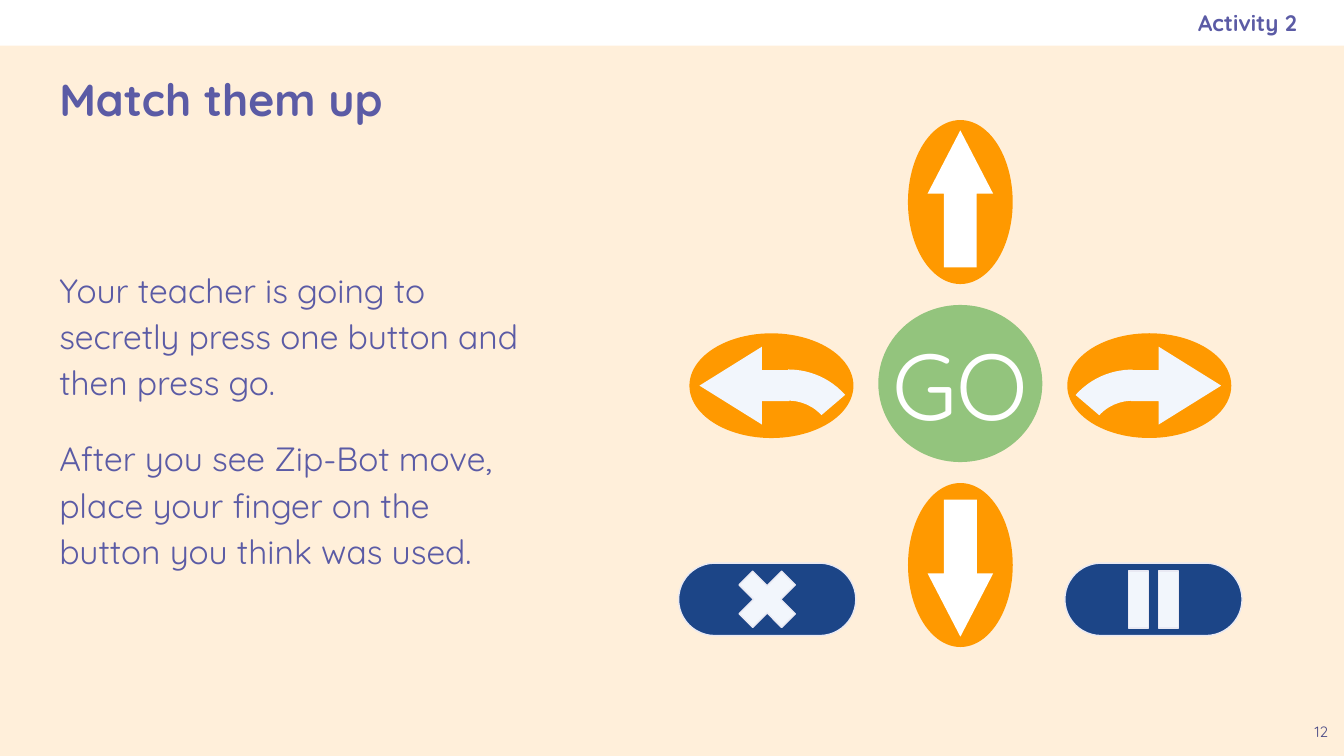
from dataclasses import dataclass

from lxml.etree import SubElement
from pptx import Presentation
from pptx.dml.color import RGBColor
from pptx.enum.shapes import MSO_SHAPE
from pptx.enum.text import MSO_ANCHOR, MSO_AUTO_SIZE, PP_ALIGN
from pptx.oxml.ns import qn
from pptx.util import Cm, Pt

CREAM = RGBColor(0xFF, 0xEF, 0xDA)
WHITE = RGBColor(0xFF, 0xFF, 0xFF)
PURPLE = RGBColor(0x5B, 0x5B, 0xA5)
DUSK = RGBColor(0x49, 0x49, 0x85)
ORANGE = RGBColor(0xFF, 0x99, 0x00)
PALE = RGBColor(0xF2, 0xF6, 0xFC)
NAVY = RGBColor(0x1C, 0x45, 0x87)
EDGE = RGBColor(0xE9, 0xE9, 0xF3)
GREEN = RGBColor(0x93, 0xC4, 0x7D)

FONT = "Quicksand"
MID_X, MID_Y = 18.15, 7.25  # centre of the GO button, in cm


@dataclass
class Part:
    """A shape whose centre lies dx, dy (cm) from the GO button."""
    kind: MSO_SHAPE
    dx: float
    dy: float
    wide: float
    high: float
    fill: RGBColor
    turn: float = 0
    adj: tuple = ()
    edge: bool = False


def place(shape, left: float, top: float, wide: float, high: float) -> None:
    shape.left, shape.top = Cm(left), Cm(top)
    shape.width, shape.height = Cm(wide), Cm(high)


def write(shape, *lines: str, size: float, color: RGBColor = PURPLE,
          bold: bool = False, align=PP_ALIGN.LEFT, anchor=MSO_ANCHOR.TOP,
          gap: float = 0, pitch: float = 1, pad=(0.25, 0.25, 0.25, 0.25)) -> None:
    """Fill a text frame; pad is left, top, right, bottom in cm."""
    frame = shape.text_frame
    frame.word_wrap = True
    frame.auto_size = MSO_AUTO_SIZE.NONE
    frame.vertical_anchor = anchor
    (frame.margin_left, frame.margin_top,
     frame.margin_right, frame.margin_bottom) = map(Cm, pad)
    for i, line in enumerate(lines):
        para = frame.add_paragraph() if i else frame.paragraphs[0]
        para.alignment = align
        para.line_spacing = pitch
        para.space_before = Pt(gap if i else 0)
        para.space_after = Pt(0)
        run = para.add_run()
        run.text = line
        font = run.font
        font.name, font.size, font.bold = FONT, Pt(size), bold
        font.color.rgb = color


def strip(shape) -> None:
    """Remove bullets and hanging indents."""
    for para in shape.text_frame.paragraphs:
        props = para._p.get_or_add_pPr()
        props.set("marL", "0")
        props.set("indent", "0")
        SubElement(props, qn("a:buNone"))


def draw(shapes, part: Part) -> None:
    shape = shapes.add_shape(
        part.kind, Cm(MID_X + part.dx - part.wide / 2),
        Cm(MID_Y + part.dy - part.high / 2), Cm(part.wide), Cm(part.high))
    shape.shadow.inherit = False
    shape.rotation = part.turn
    for i, value in enumerate(part.adj):
        shape.adjustments[i] = value
    shape.fill.solid()
    shape.fill.fore_color.rgb = part.fill
    if part.edge:
        shape.line.color.rgb = EDGE
        shape.line.width = Pt(0.75)
    else:
        shape.line.fill.background()


def move(side: int) -> list[Part]:
    """Forward (-1) or backward (1) button."""
    turn = 180 if side > 0 else 0
    return [
        Part(MSO_SHAPE.OVAL, 0, side * 3.43, 1.98, 3.1, ORANGE, turn),
        Part(MSO_SHAPE.UP_ARROW, 0, side * 3.49, 1.24, 2.59, WHITE, turn,
             (0.5, 0.966)),
    ]


def spin(side: int) -> list[Part]:
    """Turn left (-1) or turn right (1) button."""
    right = side > 0
    arrow = MSO_SHAPE.RIGHT_ARROW if right else MSO_SHAPE.LEFT_ARROW
    bend = (187.67, 1.518, 0.211) if right else (106.48, 136.33, 0.211)
    return [
        Part(MSO_SHAPE.OVAL, side * 3.57, 0.04, 1.98, 3.1, ORANGE, 180 - side * 90),
        Part(arrow, side * 4.08, 0.04, 1.7, 1.47, PALE, 0, (0.4, 0.803)),
        Part(MSO_SHAPE.BLOCK_ARC, side * 3.25, 1.13, 2.79, 2.84, PALE,
             180 + side * 87.7, bend),
    ]


def pill(side: int, icon: MSO_SHAPE, wide: float, turn: float,
         adj: tuple) -> list[Part]:
    """Clear (-1) or pause (1) button."""
    x, y = side * 3.65, 4.08
    return [
        Part(MSO_SHAPE.ROUNDED_RECTANGLE, x, y, 3.35, 1.37, NAVY, 0, (0.5,), True),
        Part(icon, x, y, wide, 1.55, PALE, turn, adj, True),
    ]


def main() -> None:
    deck = Presentation()
    deck.slide_width, deck.slide_height = Cm(25.4), Cm(14.29)
    slide = deck.slides.add_slide(deck.slide_layouts[1])
    shapes = slide.shapes
    slide.background.fill.solid()
    slide.background.fill.fore_color.rgb = CREAM

    # Header band, label and page number
    draw(shapes, Part(MSO_SHAPE.RECTANGLE, 12.7 - MID_X, 0.43 - MID_Y,
                      25.4, 0.87, WHITE))
    label = shapes.add_textbox(Cm(14.6), Cm(0), Cm(9.91), Cm(0.87))
    write(label, "Activity 2", size=12, bold=True, align=PP_ALIGN.RIGHT,
          anchor=MSO_ANCHOR.MIDDLE, pad=(0.25, 0.25, 0, 0.25))
    page = shapes.add_textbox(Cm(24.54), Cm(13.41), Cm(0.87), Cm(0.87))
    write(page, "12", size=8, color=DUSK, align=PP_ALIGN.CENTER)

    # Title and body
    place(shapes.title, 0.87, 0.89, 23.67, 1.93)
    write(shapes.title, "Match them up", size=24, bold=True,
          anchor=MSO_ANCHOR.MIDDLE)
    body = slide.placeholders[1]
    place(body, 0.87, 3.25, 9.55, 10.16)
    write(body,
          "Your teacher is going to secretly press one button and then press go.",
          "After you see Zip-Bot move, place your finger on the button you think "
          "was used.",
          size=18, gap=16, pitch=1.15, pad=(0.25, 1.73, 0.25, 0.25))
    strip(body)

    # Buttons, one group each
    keys = [
        move(-1), move(1), spin(1), spin(-1),
        pill(-1, MSO_SHAPE.MATH_MULTIPLY, 1.55, 0, (0.235,)),
        pill(1, MSO_SHAPE.MATH_EQUAL, 1.47, 270, (0.243, 0.123)),
    ]
    for key in keys:
        group = shapes.add_group_shape()
        for part in key:
            draw(group.shapes, part)

    # GO button
    wide, high = 3.1, 2.97
    group = shapes.add_group_shape()
    draw(group.shapes, Part(MSO_SHAPE.OVAL, 0, 0, wide, high, GREEN))
    text = group.shapes.add_textbox(Cm(MID_X - wide / 2), Cm(MID_Y - high / 2),
                                    Cm(wide), Cm(high))
    write(text, "GO", size=50, color=WHITE, align=PP_ALIGN.CENTER,
          anchor=MSO_ANCHOR.MIDDLE, pad=(0, 0.25, 0, 0.25))

    deck.save("out.pptx")


if __name__ == "__main__":
    main()
